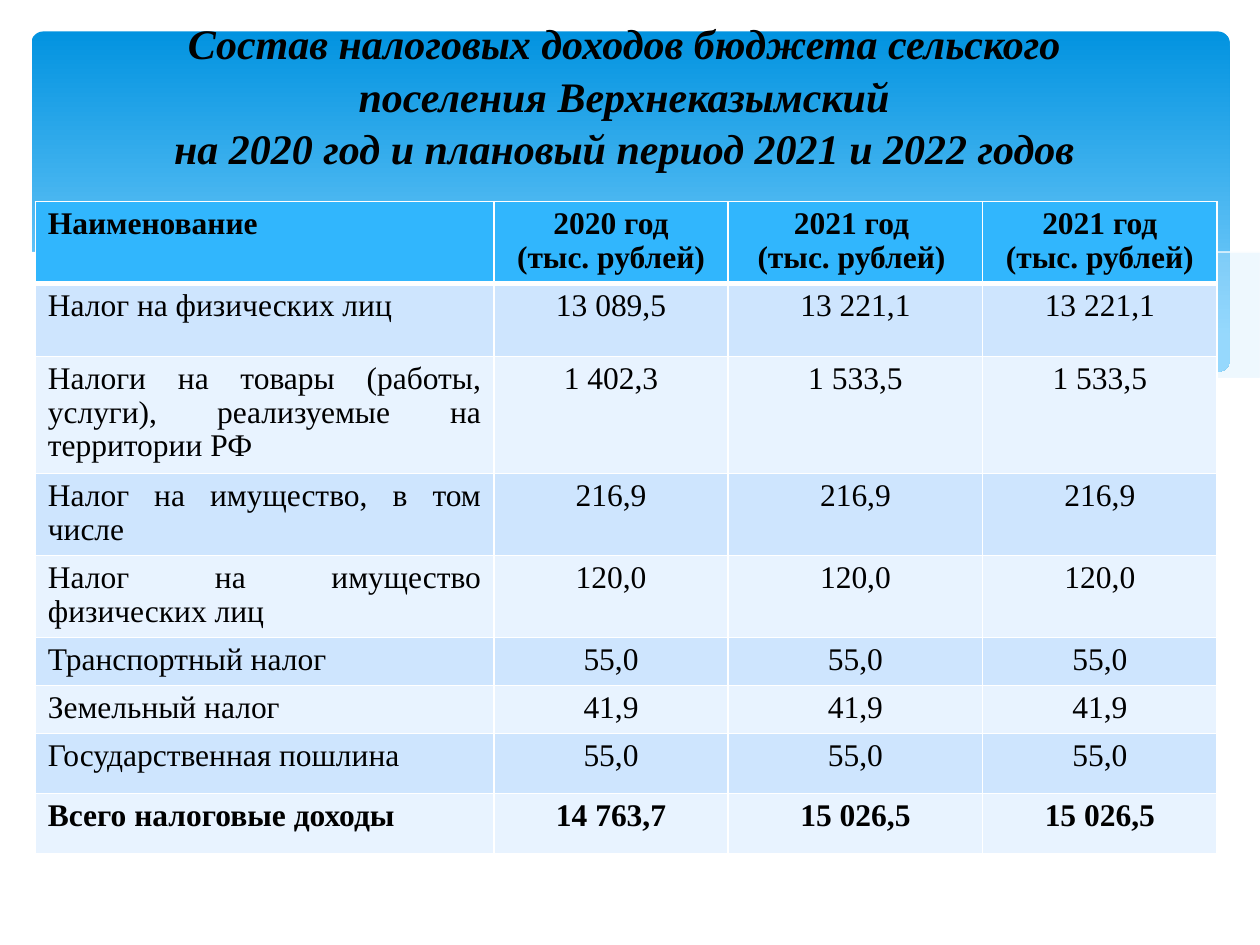
from lxml.etree import SubElement
from pptx import Presentation
from pptx.dml.color import RGBColor
from pptx.enum.shapes import MSO_SHAPE
from pptx.enum.text import MSO_ANCHOR, PP_ALIGN
from pptx.oxml.ns import qn
from pptx.util import Inches, Pt

TITLE = [
    "Состав налоговых доходов бюджета сельского ",
    "поселения Верхнеказымский ",
    "на 2020 год и плановый период 2021 и 2022 годов ",
]
HEADER = [
    ["Наименование"],
    ["2020 год", "(тыс. рублей)"],
    ["2021 год ", "(тыс. рублей) "],
    ["2021 год", "(тыс. рублей)"],
]
TAXES = [
    ("Налог на физических лиц", "13 089,5", "13 221,1", "13 221,1"),
    ("Налоги на товары (работы, услуги), реализуемые на территории РФ",
     "1 402,3", "1 533,5", "1 533,5"),
    ("Налог на имущество, в том числе", "216,9", "216,9", "216,9"),
    ("Налог на имущество физических лиц", "120,0", "120,0", "120,0"),
    ("Транспортный налог", "55,0", "55,0", "55,0"),
    ("Земельный налог", "41,9", "41,9", "41,9"),
    ("Государственная пошлина", "55,0", "55,0", "55,0"),
    ("Всего налоговые доходы", "14 763,7", "15 026,5", "15 026,5"),
]
COLUMN_WIDTHS = [3.64, 1.86, 2.02, 1.86]
ROW_HEIGHTS = [0.65, 0.58, 0.93, 0.65, 0.65, 0.38, 0.38, 0.48, 0.48]
HEADER_FILL, BANDS = "31B6FD", ("CEE5FE", "E8F3FF")
WHITE, BLACK, PALE = "FFFFFF", "000000", "C6E7FC"

RIGHT_WAVE = [
    (9.76, 2), (9.48, 2.04), (9.21, 2.1), (8.91, 2.16), (8.61, 2.23), (8.05, 2.37),
    (7.53, 2.48), (7.06, 2.57), (6.61, 2.65), (6.91, 2.69), (7.32, 2.74), (7.69, 2.77),
    (8.03, 2.78), (8.35, 2.77), (8.63, 2.75), (8.89, 2.72), (9.13, 2.67), (9.35, 2.62),
    (9.49, 2.57), (9.63, 2.52), (9.76, 2.47),
]
LONG_WAVE = [
    (8.93, 2.73), (8.66, 2.69), (8.07, 2.6), (7.41, 2.47), (6.68, 2.31), (6.29, 2.22),
    (5.84, 2.11), (5.41, 2.03), (5.02, 1.96), (4.65, 1.91), (4.2, 1.87), (3.8, 1.85),
    (3.44, 1.86), (3.13, 1.88), (2.86, 1.91), (3.23, 1.96), (3.62, 2.03), (4.04, 2.11),
    (4.49, 2.22), (4.91, 2.32), (5.66, 2.48), (6.01, 2.55), (6.5, 2.64), (6.95, 2.7),
    (7.36, 2.75), (7.73, 2.77), (8.07, 2.78), (8.38, 2.78), (8.67, 2.76),
]
FALLING_LINE = [
    (3.09, 1.95), (3.28, 1.92), (3.53, 1.89), (3.87, 1.87), (4.33, 1.87), (4.69, 1.89),
    (5.1, 1.92), (5.56, 1.97), (6.08, 2.04), (6.65, 2.13), (7.27, 2.26), (7.95, 2.41),
    (8.69, 2.61), (9.07, 2.72),
]
RISING_LINE = [
    (6.13, 2.57), (6.53, 2.46), (6.95, 2.35), (7.48, 2.23), (8.06, 2.1), (8.66, 1.99),
    (8.95, 1.94), (9.24, 1.9), (9.51, 1.87), (9.75, 1.85),
]
WHITE_WAVE = [
    (9.77, 2.46), (9.59, 2.53), (9.4, 2.59), (9.2, 2.65), (8.99, 2.69), (8.75, 2.73),
    (8.5, 2.75), (8.09, 2.77), (7.78, 2.76), (7.44, 2.74), (7.08, 2.7), (6.68, 2.65),
    (6.26, 2.58), (5.79, 2.5), (5.29, 2.39), (4.75, 2.27), (4.18, 2.13), (3.65, 2.02),
    (3.16, 1.94), (2.71, 1.88), (2.3, 1.85), (1.93, 1.84), (1.61, 1.84), (1.32, 1.86),
    (1.06, 1.89), (0.85, 1.93), (0.67, 1.97), (0.52, 2.01), (0.4, 2.05), (0.29, 2.1),
    (0.23, 2.13), (0.23, 3.29), (9.77, 3.29),
]
WAVES = [
    (RIGHT_WAVE, PALE, 29),
    (LONG_WAVE, PALE, 40),
    (FALLING_LINE, None, 100),
    (RISING_LINE, None, 100),
    (WHITE_WAVE, WHITE, 100),
]


def color(value):
    return RGBColor.from_string(value)


def write(frame, lines, size=18, bold=False, italic=False, align=PP_ALIGN.LEFT, spacing=0.96):
    for index, line in enumerate(lines):
        paragraph = frame.add_paragraph() if index else frame.paragraphs[0]
        paragraph.alignment = align
        paragraph.line_spacing = spacing
        paragraph.space_before = paragraph.space_after = Pt(0)
        run = paragraph.add_run()
        run.text = line
        run.font.name = "Times New Roman"
        run.font.size = Pt(size)
        run.font.bold = bold
        run.font.italic = italic
        run.font.color.rgb = color(BLACK)


def add_wave(shapes, points, fill, opacity):
    builder = shapes.build_freeform(*points[0], scale=Inches(1))
    builder.add_line_segments(points[1:], close=fill is not None)
    wave = builder.convert_to_shape()
    wave.shadow.inherit = False
    if fill is None:
        wave.fill.background()
        wave.line.color.rgb = color(WHITE)
        wave.line.width = Pt(0)
        return
    wave.line.fill.background()
    wave.fill.solid()
    wave.fill.fore_color.rgb = color(fill)
    if opacity < 100:
        tint = wave.element.spPr.find(qn("a:solidFill"))[0]
        SubElement(tint, qn("a:alpha"), val=str(opacity * 1000))


def add_backdrop(shapes):
    panel = shapes.add_shape(MSO_SHAPE.ROUNDED_RECTANGLE,
                             Inches(0.25), Inches(0.25), Inches(9.51), Inches(2.7))
    panel.adjustments[0] = 0.034
    panel.shadow.inherit = False
    panel.line.fill.background()
    panel.fill.gradient()
    panel.fill.gradient_angle = 270
    for stop, (position, shade) in zip(panel.fill.gradient_stops,
                                       [(0, "0293E0"), (0.9, "83D3FE")]):
        stop.position = position
        stop.color.rgb = color(shade)
    for points, fill, opacity in WAVES:
        add_wave(shapes, points, fill, opacity)


def format_cell(cell, fill, top, bottom):
    properties = cell._tc.get_or_add_tcPr()
    for side, width in (("L", 1), ("R", 1), ("T", top), ("B", bottom)):
        border = SubElement(properties, qn(f"a:ln{side}"), w=str(Pt(width)))
        solid = SubElement(border, qn("a:solidFill"))
        SubElement(solid, qn("a:srgbClr"), val=WHITE)
    cell.fill.solid()
    cell.fill.fore_color.rgb = color(fill)


def add_taxes(shapes):
    rows = [HEADER] + [[[text] for text in tax] for tax in TAXES]
    table = shapes.add_table(len(rows), len(HEADER), Inches(0.28), Inches(1.6),
                             Inches(sum(COLUMN_WIDTHS)), Inches(sum(ROW_HEIGHTS))).table
    for column, width in zip(table.columns, COLUMN_WIDTHS):
        column.width = Inches(width)
    for r, (row, height) in enumerate(zip(rows, ROW_HEIGHTS)):
        table.rows[r].height = Inches(height)
        fill = BANDS[(r - 1) % 2] if r else HEADER_FILL
        name_align = PP_ALIGN.JUSTIFY if r else PP_ALIGN.LEFT
        for c, lines in enumerate(row):
            cell = table.cell(r, c)
            format_cell(cell, fill, top=3 if r == 1 else 1, bottom=1 if r else 3)
            write(cell.text_frame, lines, bold=r in (0, len(TAXES)),
                  align=PP_ALIGN.CENTER if c else name_align)


def main():
    deck = Presentation()
    deck.slide_width, deck.slide_height = Inches(10), Inches(7.5)
    slide = deck.slides.add_slide(deck.slide_layouts[5])
    shapes = slide.shapes
    title = shapes.title
    add_backdrop(shapes)
    shapes.element.append(title.element)
    title.left, title.top = Inches(0.5), Inches(0.36)
    title.width, title.height = Inches(8.99), Inches(1.18)
    title.text_frame.word_wrap = True
    title.text_frame.vertical_anchor = MSO_ANCHOR.MIDDLE
    title.text_frame.margin_bottom = Inches(0.45)
    write(title.text_frame, TITLE, size=24, bold=True, italic=True,
          align=PP_ALIGN.CENTER, spacing=1.04)
    add_taxes(shapes)
    deck.save("out.pptx")


if __name__ == "__main__":
    main()
